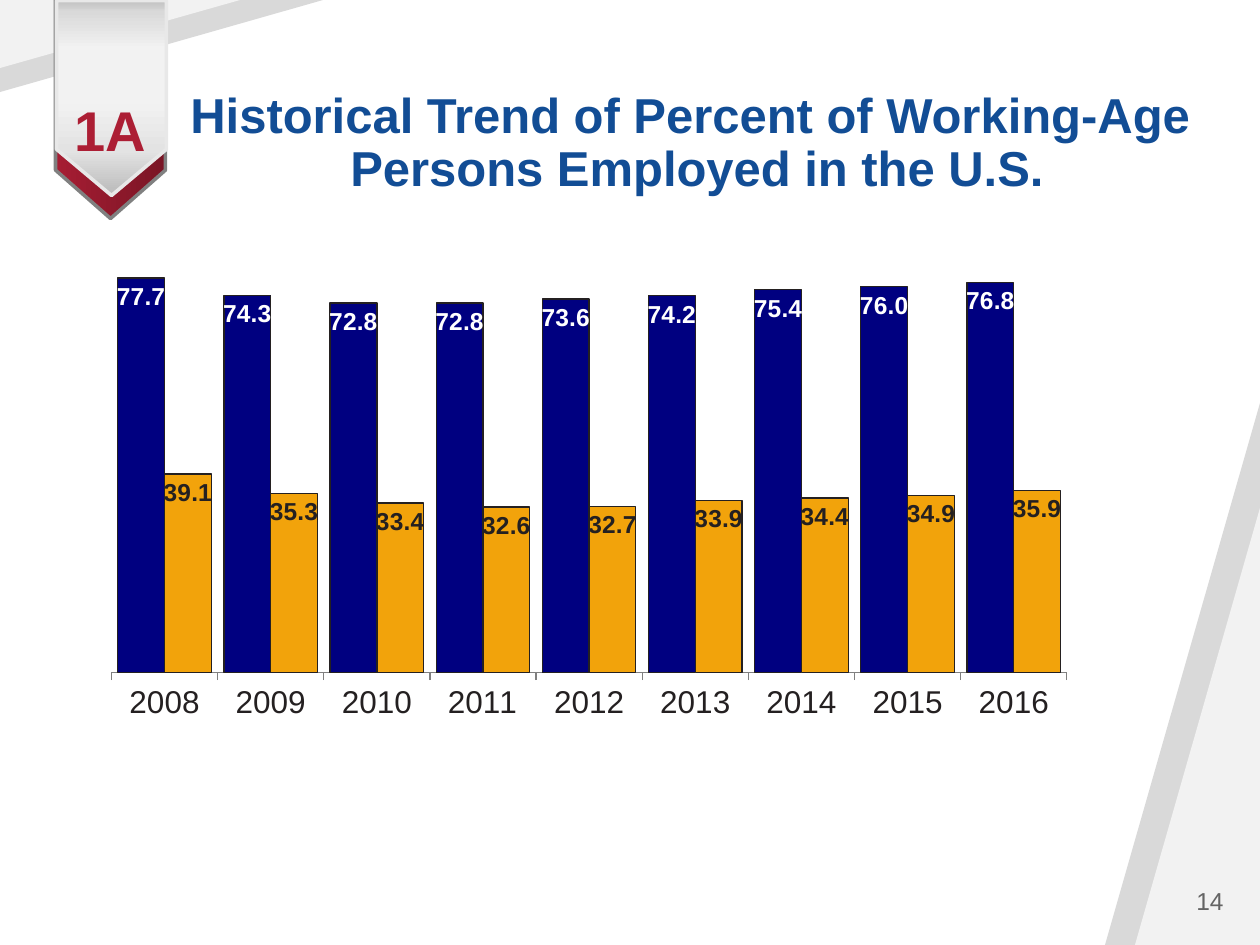
from pptx import Presentation
from pptx.chart.data import CategoryChartData
from pptx.dml.color import RGBColor
from pptx.enum.chart import XL_CHART_TYPE, XL_LABEL_POSITION, XL_TICK_MARK
from pptx.enum.shapes import MSO_SHAPE
from pptx.enum.text import MSO_ANCHOR, PP_ALIGN
from pptx.oxml import parse_xml
from pptx.oxml.ns import nsdecls
from pptx.util import Pt

PX = 914400 // 126
TRIANGLE = MSO_SHAPE.ISOSCELES_TRIANGLE
PENTAGON = MSO_SHAPE.PENTAGON
CENTER, RIGHT = PP_ALIGN.CENTER, PP_ALIGN.RIGHT
TOP, MIDDLE, BOTTOM = MSO_ANCHOR.TOP, MSO_ANCHOR.MIDDLE, MSO_ANCHOR.BOTTOM
CLUSTERED = XL_CHART_TYPE.COLUMN_CLUSTERED
INSIDE_END = XL_LABEL_POSITION.INSIDE_END
TICK_OUTSIDE = XL_TICK_MARK.OUTSIDE
FONT = "Arial"
HEX = {
    "band": "D9D9D9", "corner": "F2F2F2", "title": "124D95", "number": "646464",
    "badge": "AC1E34", "ink": "242021", "navy": "000080", "amber": "F2A30B",
    "white": "FFFFFF", "gray": "808080", "edge": "E8E8E8",
}
COLORS = {name: RGBColor.from_string(value) for name, value in HEX.items()}


def add_preset(kind, box, adjustment, rotation):
    shape = slide.shapes.add_shape(kind, *[value * PX for value in box])
    shape.shadow.inherit = False
    shape.adjustments[0] = adjustment
    shape.rotation = rotation
    return shape


def add_text(lines, box, size, color, bold, alignment, anchor, spacing, top_inset):
    text_box = slide.shapes.add_textbox(*[value * PX for value in box])
    frame = text_box.text_frame
    frame.word_wrap = True
    frame.vertical_anchor = anchor
    frame.margin_top = top_inset * PX
    paragraph = frame.paragraphs[0]
    paragraph.alignment = alignment
    paragraph.line_spacing = spacing
    for index, line in enumerate(lines):
        if index:
            paragraph.add_line_break()
        run = paragraph.add_run()
        run.text = line
        run.font.name = FONT
        run.font.size = Pt(size)
        run.font.bold = bold
        run.font.color.rgb = COLORS[color]


presentation = Presentation()
presentation.slide_width = 1260 * PX
presentation.slide_height = 945 * PX
slide = presentation.slides.add_slide(presentation.slide_layouts[6])

for box, rotation, color in [
    ((1105, 403, 155, 542), 0, "band"),
    ((1135, 508, 125, 437), 0, "corner"),
    ((0, 0, 323, 92), 180, "band"),
    ((0, 0, 240, 68), 180, "corner"),
]:
    triangle = add_preset(TRIANGLE, box, 1, rotation)
    triangle.fill.solid()
    triangle.fill.fore_color.rgb = COLORS[color]
    triangle.line.fill.background()

add_text(
    ["Historical Trend of Percent of Working-Age ", "Persons Employed in the U.S."],
    (149, 58, 1096, 145), 28, "title", True, CENTER, BOTTOM, 0.9, 6,
)
add_text(["14"], (1060, 876, 176, 50), 14, "number", False, RIGHT, MIDDLE, 1.0, 6)

chart_data = CategoryChartData(number_format="0.0")
chart_data.categories = [str(year) for year in range(2008, 2017)]
chart_data.add_series("Series 1", [77.7, 74.3, 72.8, 72.8, 73.6, 74.2, 75.4, 76.0, 76.8])
chart_data.add_series("Series 2", [39.1, 35.3, 33.4, 32.6, 32.7, 33.9, 34.4, 34.9, 35.9])
chart_box = [value * PX for value in (59, 261, 1050, 549)]
chart = slide.shapes.add_chart(CLUSTERED, *chart_box, chart_data).chart
chart.has_title = False
chart.has_legend = False
chart.font.name = FONT
chart.font.size = Pt(18)
chart.font.color.rgb = COLORS["ink"]

value_axis = chart.value_axis
value_axis.visible = False
value_axis.has_major_gridlines = False
value_axis.minimum_scale = 0
value_axis.maximum_scale = 80
value_axis.major_unit = 20
category_axis = chart.category_axis
category_axis.major_tick_mark = TICK_OUTSIDE
category_axis.format.line.color.rgb = COLORS["gray"]
category_axis.format.line.width = Pt(0.75)

plot = chart.plots[0]
plot.gap_width = 27
plot.overlap = 0
plot.vary_by_categories = False
for series, fill_color, label_color in zip(plot.series, ("navy", "amber"), ("white", "ink")):
    series.format.fill.solid()
    series.format.fill.fore_color.rgb = COLORS[fill_color]
    series.format.line.color.rgb = COLORS["ink"]
    series.format.line.width = Pt(0.75)
    labels = series.data_labels
    labels.show_value = True
    labels.position = INSIDE_END
    labels.number_format = "#,##0.0"
    labels.number_format_is_linked = False
    labels.font.name = FONT
    labels.font.size = Pt(14)
    labels.font.bold = True
    labels.font.color.rgb = COLORS[label_color]

plot_area = chart._chartSpace.chart.plotArea
for layout in plot_area.xpath("c:layout"):
    plot_area.remove(layout)
places = "".join(
    f'<c:{name} val="{value}"/>'
    for name, value in [("x", 0.05), ("y", 0.01), ("w", 0.91), ("h", 0.74)]
)
plot_area.insert(0, parse_xml(
    f'<c:layout {nsdecls("c")}><c:manualLayout><c:layoutTarget val="inner"/>'
    f'<c:xMode val="edge"/><c:yMode val="edge"/>{places}</c:manualLayout></c:layout>'
))

for box, point, line_color, angle, stops in [
    ((1, 54, 219, 110), 0.44, "gray", 270, [(0, "A61D33"), (100, "7A1525")]),
    ((14, 43, 195, 110), 0.42, "edge", 0, [
        (0, "BFBFBF"), (6, "D9D9D9"), (25, "F2F2F2"),
        (53, "F1F1F1"), (77, "E3E3E3"), (97, "BFBFBF"),
    ]),
]:
    ribbon = add_preset(PENTAGON, box, point, 90)
    ribbon.line.color.rgb = COLORS[line_color]
    ribbon.line.width = Pt(2)
    ribbon.fill.gradient()
    ribbon.fill.gradient_angle = 0
    gradient = ribbon._element.spPr.find("{*}gradFill")
    stop_xml = "".join(
        f'<a:gs pos="{position * 1000}"><a:srgbClr val="{color}"/></a:gs>'
        for position, color in stops
    )
    gradient.getparent().replace(gradient, parse_xml(
        f'<a:gradFill {nsdecls("a")} rotWithShape="1"><a:gsLst>{stop_xml}</a:gsLst>'
        f'<a:lin ang="{angle * 60000}" scaled="0"/></a:gradFill>'
    ))

add_text(["1A"], (47, 73, 127, 111), 32, "badge", True, CENTER, TOP, 0.9, 30)

presentation.save("out.pptx")
